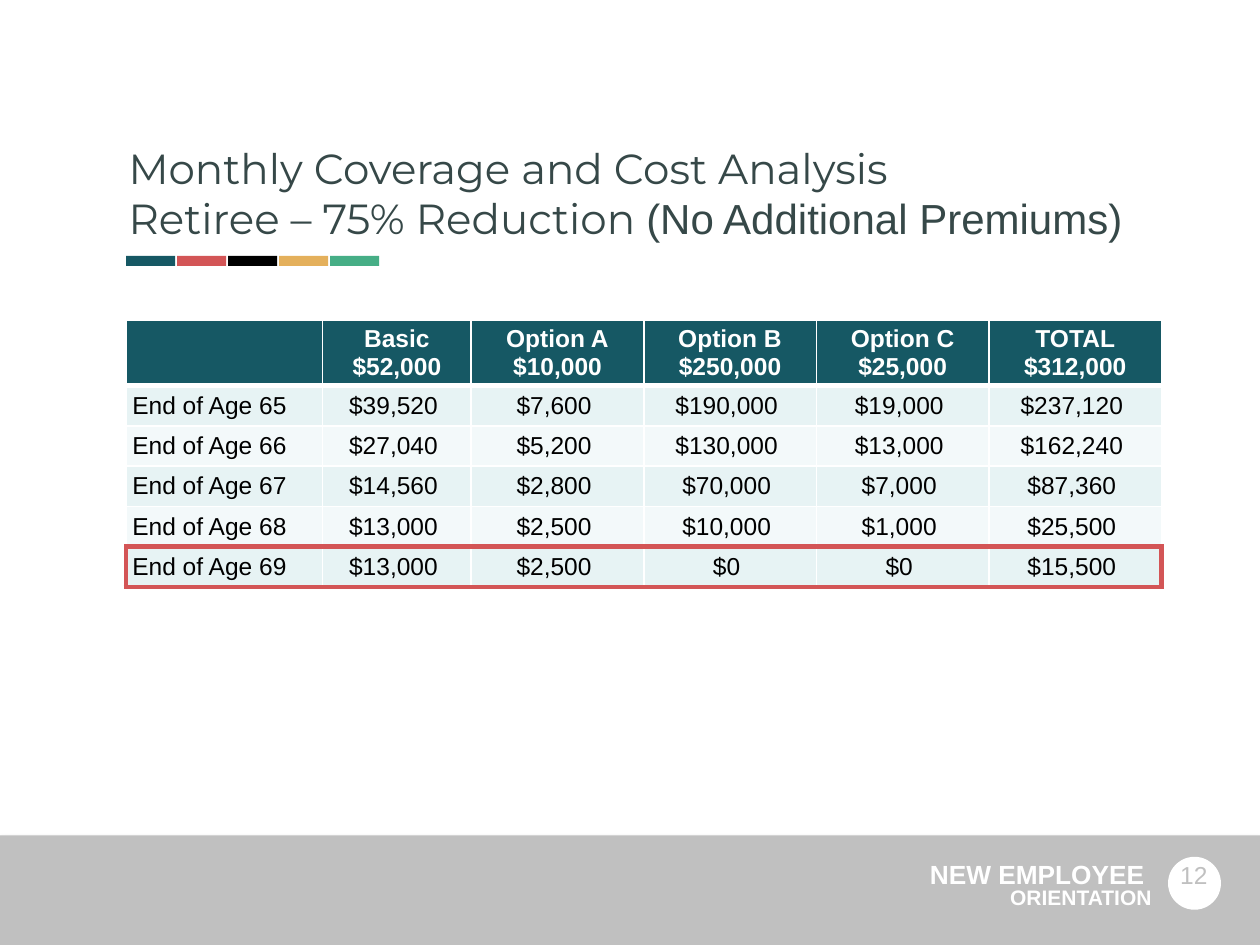
from lxml.etree import SubElement
from pptx import Presentation
from pptx.dml.color import RGBColor
from pptx.enum.shapes import MSO_SHAPE
from pptx.enum.text import MSO_ANCHOR, MSO_AUTO_SIZE, PP_ALIGN
from pptx.oxml import parse_xml
from pptx.oxml.ns import nsdecls, qn
from pptx.util import Inches, Pt

# Content
TITLE = [
    [("Monthly Coverage and Cost Analysis", "Montserrat")],
    [("Retiree – 75% Reduction ", "Montserrat"), ("(No Additional Premiums)", "Arial")],
]
HEADERS = [
    [], ["Basic", "$52,000"], ["Option A", "$10,000"], ["Option B", "$250,000"],
    ["Option C", "$25,000"], ["TOTAL", "$312,000"],
]
ROWS = [
    ("End of Age 65", "$39,520", "$7,600", "$190,000", "$19,000", "$237,120"),
    ("End of Age 66", "$27,040", "$5,200", "$130,000", "$13,000", "$162,240"),
    ("End of Age 67", "$14,560", "$2,800", "$70,000", "$7,000", "$87,360"),
    ("End of Age 68", "$13,000", "$2,500", "$10,000", "$1,000", "$25,500"),
    ("End of Age 69", "$13,000", "$2,500", "$0", "$0", "$15,500"),
]
FOOTER = [("NEW EMPLOYEE ", 15), ("ORIENTATION", 12)]
PAGE_NUMBER = "12"

# Palette and grid
TEAL, RED, WHITE, GREY = "165864", "D35556", "FFFFFF", "C0C0C0"
ACCENTS = [TEAL, RED, "000000", "E4B05C", "46AE86"]
BANDS = ["E7F3F4", "F3F9FA"]
WIDTH, HEIGHT, MARGIN = 10, 7.5, 1
COLUMNS = [1.56, 1.18] + [1.37] * 4
HEADER_HEIGHT, ROW_HEIGHT = 0.52, 0.32
FOOTER_TOP = 6.63


def color(value):
    return RGBColor.from_string(value)


def add_run(paragraph, text, size, fill, font="Arial", bold=False):
    run = paragraph.add_run()
    run.text = text
    for name, value in dict(name=font, size=Pt(size), bold=bold).items():
        setattr(run.font, name, value)
    run.font.color.rgb = color(fill)


def paragraph_at(frame, index):
    return frame.add_paragraph() if index else frame.paragraphs[0]


def set_margins(target, horizontal, vertical):
    for side in ("left", "right"):
        setattr(target, f"margin_{side}", Inches(horizontal))
    for side in ("top", "bottom"):
        setattr(target, f"margin_{side}", Inches(vertical))


def place(shape, *box):
    for name, value in zip(("left", "top", "width", "height"), box):
        setattr(shape, name, Inches(value))


def prepare(frame):
    frame.word_wrap = True
    frame.auto_size = MSO_AUTO_SIZE.NONE
    frame.vertical_anchor = MSO_ANCHOR.TOP
    set_margins(frame, 0.05, 0.05)
    return frame


def add_text_box(slide, *box):
    return prepare(slide.shapes.add_textbox(*map(Inches, box)).text_frame)


def add_block(slide, kind, fill, *box):
    shape = slide.shapes.add_shape(kind, *map(Inches, box))
    shape.shadow.inherit = False
    shape.fill.solid()
    shape.fill.fore_color.rgb = color(fill)
    shape.line.fill.background()
    return shape


def set_borders(cell, borders):
    properties = cell._tc.get_or_add_tcPr()
    for side in "LRTB":
        fill, width = borders.get(side, (WHITE, 1))
        line = SubElement(properties, qn(f"a:ln{side}"), w=str(Pt(width)))
        solid = SubElement(line, qn("a:solidFill"))
        SubElement(solid, qn("a:srgbClr"), val=fill)


def fill_cell(cell, lines, fill, borders, text_color, bold, centered):
    for index, text in enumerate(lines):
        paragraph = paragraph_at(cell.text_frame, index)
        paragraph.alignment = PP_ALIGN.CENTER if centered else PP_ALIGN.LEFT
        add_run(paragraph, text, 14, text_color, bold=bold)
    cell.vertical_anchor = MSO_ANCHOR.MIDDLE
    set_borders(cell, borders)
    cell.fill.solid()
    cell.fill.fore_color.rgb = color(fill)


def add_title(slide):
    title = slide.shapes.title
    place(title, 0.97, 1.08, 8.56, 1.02)
    frame = prepare(title.text_frame)
    for index, runs in enumerate(TITLE):
        paragraph = paragraph_at(frame, index)
        paragraph.alignment = PP_ALIGN.LEFT
        for text, font in runs:
            add_run(paragraph, text, 24, "364848", font)
    # Accent strip under the title
    for index, fill in enumerate(ACCENTS):
        add_block(slide, MSO_SHAPE.RECTANGLE, fill, MARGIN + index * 0.405, 2.03, 0.39, 0.08)


def add_footer(slide):
    band = add_block(slide, MSO_SHAPE.RECTANGLE, GREY, 0, FOOTER_TOP, WIDTH, HEIGHT - FOOTER_TOP)
    effects = band._element.spPr.find(qn("a:effectLst"))
    effects.append(parse_xml(
        f'<a:outerShdw {nsdecls("a")} blurRad="{Pt(3)}" dist="{Pt(1.8)}" dir="5400000" rotWithShape="0">'
        '<a:srgbClr val="000000"><a:alpha val="35000"/></a:srgbClr></a:outerShdw>'))
    frame = add_text_box(slide, 0.6, 6.81, 8.59, 0.48)
    for index, (text, size) in enumerate(FOOTER):
        paragraph = paragraph_at(frame, index)
        paragraph.alignment = PP_ALIGN.RIGHT
        paragraph.line_spacing = 0.8
        add_run(paragraph, text, size, WHITE, bold=True)
    # Page number in its circle
    add_block(slide, MSO_SHAPE.OVAL, WHITE, 9.27, 6.8, 0.42, 0.42)
    paragraph = add_text_box(slide, 9.31, 6.78, 0.33, 0.32).paragraphs[0]
    paragraph.alignment = PP_ALIGN.CENTER
    add_run(paragraph, PAGE_NUMBER, 14, GREY)


def add_coverage_table(slide):
    height = HEADER_HEIGHT + len(ROWS) * ROW_HEIGHT
    table = slide.shapes.add_table(
        len(ROWS) + 1, len(COLUMNS), Inches(MARGIN), Inches(2.54),
        Inches(sum(COLUMNS)), Inches(height)).table
    table.horz_banding = False
    for column, width in zip(table.columns, COLUMNS):
        column.width = Inches(width)
    for index, row in enumerate(table.rows):
        row.height = Inches(ROW_HEIGHT if index else HEADER_HEIGHT)

    for column, lines in enumerate(HEADERS):
        cell = table.cell(0, column)
        set_margins(cell, 0.05, 0.03)
        fill_cell(cell, lines, TEAL, {"B": (WHITE, 3)}, WHITE, True, True)

    # Body rows, with the last one framed in red
    last_row, last_column = len(ROWS), len(COLUMNS) - 1
    frame_line = (RED, 3)
    for row, values in enumerate(ROWS, start=1):
        for column, value in enumerate(values):
            borders = {"T": (WHITE, 3)} if row == 1 else {}
            if row >= last_row - 1:
                borders["B"] = frame_line
            if row == last_row:
                borders["T"] = frame_line
                if column == 0:
                    borders["L"] = frame_line
                if column == last_column:
                    borders["R"] = frame_line
            cell = table.cell(row, column)
            set_margins(cell, 0 if column else 0.05, 0)
            text = f"{value} " if column else value
            fill_cell(cell, [text], BANDS[(row - 1) % 2], borders, "000000", False, column > 0)


def main():
    presentation = Presentation()
    presentation.slide_width, presentation.slide_height = Inches(WIDTH), Inches(HEIGHT)
    slide = presentation.slides.add_slide(presentation.slide_layouts[5])
    add_title(slide)
    add_footer(slide)
    add_coverage_table(slide)
    presentation.save("out.pptx")


if __name__ == "__main__":
    main()
